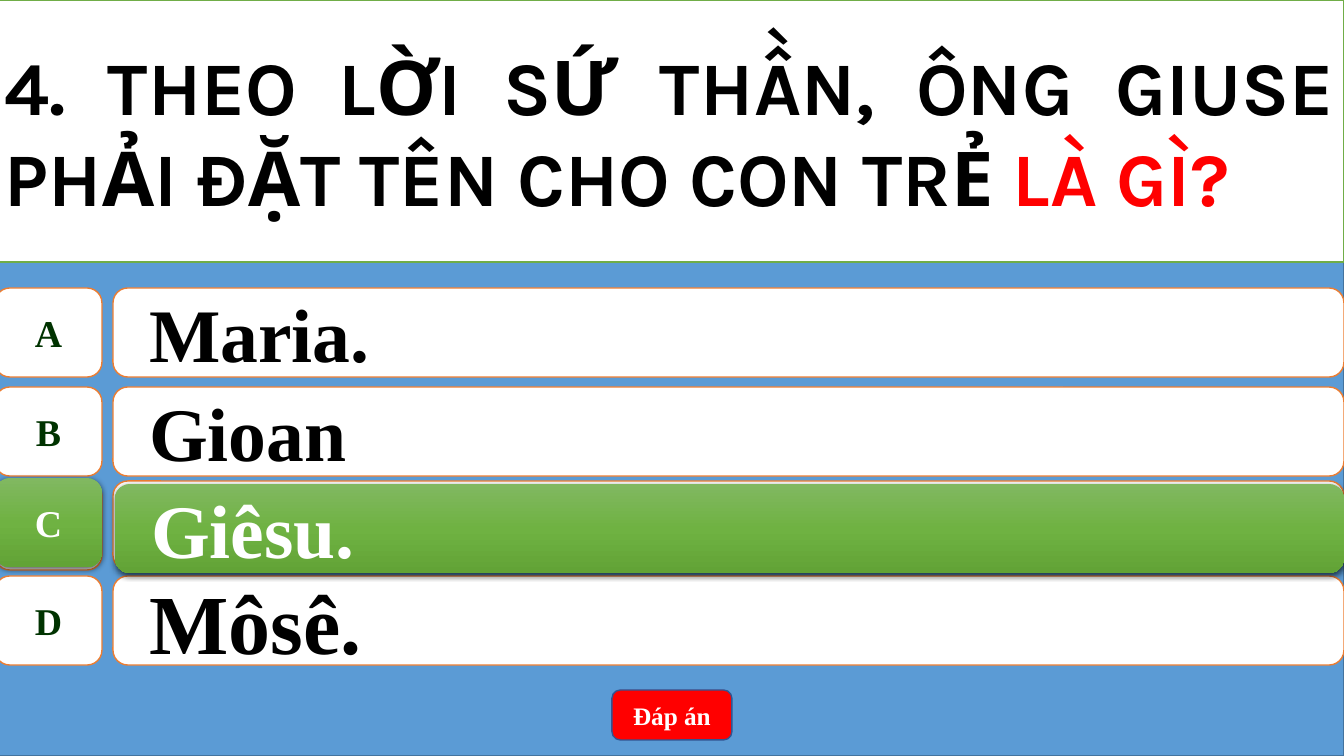
from pptx import Presentation
from pptx.dml.color import RGBColor
from pptx.enum.shapes import MSO_SHAPE
from pptx.enum.text import MSO_ANCHOR, PP_ALIGN
from pptx.oxml import parse_xml
from pptx.oxml.ns import nsdecls, qn
from pptx.util import Emu, Pt

RECT = MSO_SHAPE.RECTANGLE
ROUNDED = MSO_SHAPE.ROUNDED_RECTANGLE
LETTER_BOX = MSO_SHAPE.FLOWCHART_ALTERNATE_PROCESS
MIDDLE = MSO_ANCHOR.MIDDLE
LEFT, CENTER, JUSTIFY = PP_ALIGN.LEFT, PP_ALIGN.CENTER, PP_ALIGN.JUSTIFY

EMU_PER_PX = 914400 / 100.8
PAGE_WIDTH, PAGE_HEIGHT = 1344, 756
ROW_HEIGHT = 89
SERIF, SANS = "Times New Roman", "Karla"
COLORS = {
    "white": "FFFFFF", "black": "000000", "red": "FF0000",
    "backdrop": "5B9BD5", "backdrop_line": "43739E",
    "answer_line": "ED7D31", "letter": "003300",
    "button_line": "325491", "question_line": "70AD47",
}
GREEN_STOPS = [(0, "81B861"), (50, "6FB242"), (100, "62A336")]
ANSWERS = [("A", "Maria.", 54, 288), ("B", "Gioan", 54, 387),
           ("C", "Giêsu.", 54, 481), ("D", "Môsê.", 60, 576)]


def px(length):
    """Turn pixels into EMU."""
    return Emu(round(length * EMU_PER_PX))


def color(name):
    """Look up a colour by name."""
    return RGBColor.from_string(COLORS[name])


def add_box(shapes, kind, bounds, fill=None, line=None):
    """Add a preset shape with a flat fill and outline, or the raised green look."""
    box = shapes.add_shape(kind, *map(px, bounds))
    box.shadow.inherit = False
    if fill:
        box.fill.solid()
        box.fill.fore_color.rgb = color(fill)
        box.line.color.rgb = color(line)
        box.line.width = Pt(1)
    else:
        box.line.fill.background()
        raise_green(box)
    box.text_frame.vertical_anchor = MIDDLE
    return box


def raise_green(box):
    """Give a box the green gradient and a soft shadow below."""
    box.fill.gradient()
    box.fill.gradient_angle = 270
    properties = box._element.spPr
    stops = properties.find(qn("a:gradFill")).find(qn("a:gsLst"))
    for stop in list(stops):
        stops.remove(stop)
    for position, value in GREEN_STOPS:
        stops.append(parse_xml(
            f'<a:gs {nsdecls("a")} pos="{position * 1000}">'
            f'<a:srgbClr val="{value}"/></a:gs>'))
    properties.find(qn("a:effectLst")).append(parse_xml(
        f'<a:outerShdw {nsdecls("a")} blurRad="{Pt(4.5)}" dist="{Pt(1.5)}" '
        f'dir="5400000" algn="ctr" rotWithShape="0"><a:srgbClr val="{COLORS["black"]}">'
        '<a:alpha val="63000"/></a:srgbClr></a:outerShdw>'))


def write(box, spans, size, font, align):
    """Write bold coloured spans as one paragraph and return it."""
    para = box.text_frame.paragraphs[0]
    para.alignment = align
    for text, ink in spans:
        span = para.add_run()
        span.text = text
        span.font.name = font
        span.font.size = Pt(size)
        span.font.bold = True
        span.font.color.rgb = color(ink)
    return para


def add_letter(shapes, bounds, letter, ink, fill=None, line=None):
    """Add the letter box of an answer."""
    box = add_box(shapes, LETTER_BOX, bounds, fill, line)
    box.text_frame.word_wrap = False
    write(box, [(letter, ink)], 27, SERIF, CENTER)


def add_answer(shapes, bounds, answer, size, ink, fill=None, line=None):
    """Add the wide box of an answer with its indented text."""
    box = add_box(shapes, ROUNDED, bounds, fill, line)
    box.text_frame.word_wrap = True
    para = write(box, [(answer, ink)], size, SERIF, LEFT)
    para.level = 1
    indents = para._p.get_or_add_pPr()
    indents.set("marL", str(px(50)))
    indents.set("indent", str(px(-28)))


def add_row(page, bounds, letter, answer, size):
    """Add one white answer row."""
    left, top, width, height = bounds
    shapes = page.shapes.add_group_shape().shapes
    add_letter(shapes, (left, top, 107, height), letter, "letter", "white", "answer_line")
    add_answer(shapes, (left + 118, top, width - 118, height), answer, size,
               "black", "white", "answer_line")


def add_correct_row(page, bounds, letter, answer, size):
    """Add the green row of the correct answer."""
    left, top, width, height = bounds
    shapes = page.shapes.add_group_shape().shapes
    add_letter(shapes, (left, top, 107, height), letter, "white")
    add_answer(shapes, (left + 120, top + 6, width - 120, height), answer, size, "white")


def add_button(page, bounds):
    """Add the red answer button."""
    box = add_box(page.shapes, ROUNDED, bounds, "red", "button_line")
    write(box, [("Đáp án", "white")], 18, SERIF, CENTER)


def add_question(page, bounds):
    """Add the question panel."""
    box = add_box(page.shapes, RECT, bounds, "white", "question_line")
    box.text_frame.word_wrap = True
    write(box, [("4. THEO LỜI SỨ THẦN, ÔNG GIUSE PHẢI ĐẶT TÊN CHO CON TRẺ ", "black"),
                ("LÀ GÌ?", "red")], 54, SANS, JUSTIFY)


def main():
    """Build the quiz slide and save it."""
    deck = Presentation()
    deck.slide_width, deck.slide_height = px(PAGE_WIDTH), px(PAGE_HEIGHT)
    page = deck.slides.add_slide(deck.slide_layouts[6])
    left, width = -5, PAGE_WIDTH + 5
    add_box(page.shapes, RECT, (left, 0, width, PAGE_HEIGHT), "backdrop", "backdrop_line")
    add_button(page, (612, 690, 120, 50))
    for letter, answer, size, top in ANSWERS:
        add_row(page, (left, top, width, ROW_HEIGHT), letter, answer, size)
    letter, answer, size, top = ANSWERS[2]
    add_correct_row(page, (left, top - 3, width, ROW_HEIGHT), letter, answer, size)
    add_question(page, (left, 0, width, 262))
    deck.save("out.pptx")


if __name__ == "__main__":
    main()
